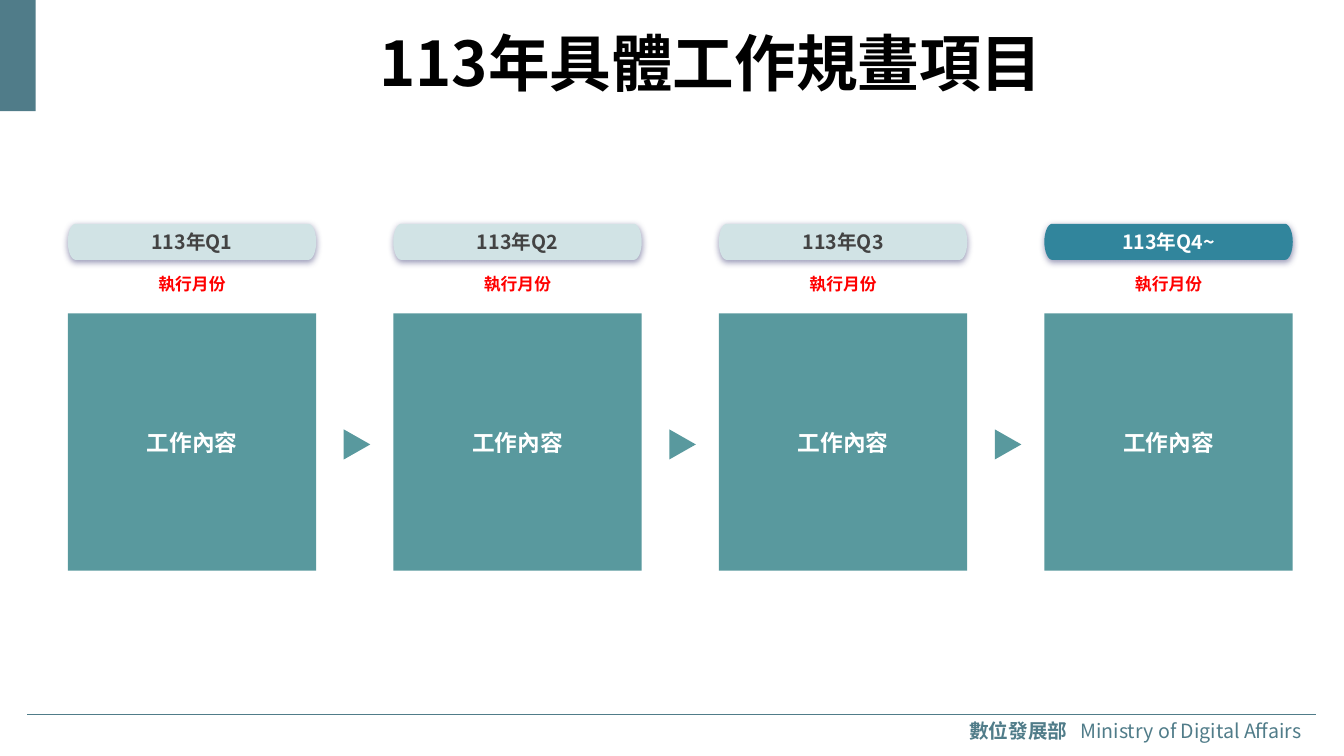
from math import cos, pi, sin

from lxml.etree import SubElement
from pptx import Presentation
from pptx.dml.color import RGBColor
from pptx.enum.shapes import MSO_CONNECTOR, MSO_SHAPE
from pptx.enum.text import MSO_ANCHOR as Anchor, MSO_AUTO_SIZE as AutoSize, PP_ALIGN as Align
from pptx.oxml.ns import qn
from pptx.util import Cm, Pt

SLATE = RGBColor(0x50, 0x7C, 0x89)
TEAL = RGBColor(0x59, 0x99, 0x9E)
PALE = RGBColor(0xD1, 0xE3, 0xE5)
DEEP = RGBColor(0x31, 0x85, 0x9C)
GREY = RGBColor(0x43, 0x43, 0x43)
RED = RGBColor(0xFF, 0x00, 0x00)
BLACK = RGBColor(0x00, 0x00, 0x00)
WHITE = RGBColor(0xFF, 0xFF, 0xFF)

BODY_FONT = "Noto Sans CJK SC"
HEAD_FONT = "Noto Sans CJK TC"

QUARTERS = [
    ("113年Q1", PALE, GREY),
    ("113年Q2", PALE, GREY),
    ("113年Q3", PALE, GREY),
    ("113年Q4~", DEEP, WHITE),
]


def write(shape, *texts, size, color, font=BODY_FONT, bold=(True,), align=Align.CENTER,
          anchor=Anchor.MIDDLE, inset=(0.2, 0.1), wrap=True):
    """Fill a shape with one paragraph; each text is a run with its own weight."""
    frame = shape.text_frame
    frame.auto_size = AutoSize.NONE
    frame.word_wrap = wrap
    frame.vertical_anchor = anchor
    frame.margin_left = frame.margin_right = Cm(inset[0])
    frame.margin_top = frame.margin_bottom = Cm(inset[1])
    paragraph = frame.paragraphs[0]
    paragraph.alignment = align
    for text, weight in zip(texts, bold):
        run = paragraph.add_run()
        run.text = text
        run.font.size = Pt(size)
        run.font.bold = weight
        run.font.color.rgb = color
        run.font.name = font
        SubElement(run.font._element, qn("a:ea"), typeface=font)
    return paragraph


def paint(shape, color):
    shape.fill.solid()
    shape.fill.fore_color.rgb = color
    shape.line.fill.background()
    shape.shadow.inherit = False
    return shape


def add_rectangle(slide, left, top, width, height, color):
    box = (Cm(length) for length in (left, top, width, height))
    return paint(slide.shapes.add_shape(MSO_SHAPE.RECTANGLE, *box), color)


def add_text_box(slide, left, top, width, height):
    return slide.shapes.add_textbox(Cm(left), Cm(top), Cm(width), Cm(height))


def add_outline(slide, points, color):
    points = [(Cm(x), Cm(y)) for x, y in points]
    builder = slide.shapes.build_freeform(*points[0])
    builder.add_line_segments(points[1:], close=True)
    return paint(builder.convert_to_shape(), color)


def add_pill(slide, left, top, width, height, color):
    """Bar with half-ellipse ends and a soft shadow below."""
    end, half, steps = 0.2, height / 2, 16
    right_end = [(left + width - end + end * sin(pi * i / steps),
                  top + half - half * cos(pi * i / steps)) for i in range(steps + 1)]
    left_end = [(2 * left + width - x, y) for x, y in reversed(right_end)]
    pill = add_outline(slide, right_end + left_end, color)

    effects = pill._element.spPr.find(qn("a:effectLst"))
    shadow = SubElement(effects, qn("a:outerShdw"), blurRad=str(Pt(4.5)),
                        dist=str(Pt(1.5)), dir="5400000", algn="bl", rotWithShape="0")
    tint = SubElement(shadow, qn("a:srgbClr"), val="393973")
    SubElement(tint, qn("a:alpha"), val="50000")
    return pill


def add_arrow(slide, left, top, width, height):
    tip = (left + width, top + height / 2)
    add_outline(slide, [(left, top), tip, (left, top + height)], TEAL)


def add_quarter(slide, left, top, width, label, fill, color):
    # Quarter label
    pill = add_pill(slide, left, top, width, 0.91, fill)
    write(pill, label, size=14, color=color, inset=(0.2, 0.2))
    # Months
    months = add_text_box(slide, left + 0.73, top + 1.17, width - 1.46, 0.91)
    write(months, "執行月份", size=12, color=RED, anchor=Anchor.TOP, inset=(0.15, 0.08))
    # Work content
    content = add_rectangle(slide, left, top + 2.26, width, 6.48, TEAL)
    write(content, "工作內容", size=16.2, color=WHITE, inset=(0.08, 0.13))


def add_timeline(slide, left, top, width):
    column, arrow = 6.26, 0.67
    pitch = (width - column) / (len(QUARTERS) - 1)
    for index, quarter in enumerate(QUARTERS):
        x = left + index * pitch
        add_quarter(slide, x, top, column, *quarter)
        if index:
            add_arrow(slide, x - 1.25, top + 5.18, arrow, 0.76)


def add_header(slide, left, top, width, height):
    add_rectangle(slide, 0, 0, 0.9, 2.8, SLATE)
    title = slide.shapes.title
    title.left, title.top, title.width, title.height = map(Cm, (left, top, width, height))
    write(title, "113年具體工作規畫項目", size=44, color=BLACK, font=HEAD_FONT)


def add_footer(slide, left, top, width):
    # Rule
    rule = slide.shapes.add_connector(MSO_CONNECTOR.STRAIGHT, Cm(left), Cm(top),
                                      Cm(left + width), Cm(top))
    rule.line.color.rgb = SLATE
    rule.line.width = Pt(0.5)
    SubElement(rule._element.spPr, qn("a:effectLst"))
    # Ministry name, with a tab between the two languages
    name_width = 8.94
    name = add_text_box(slide, left + width - name_width, top, name_width, 0.81)
    paragraph = write(name, "數位發展部\t", "Ministry of Digital Affairs", size=14,
                      color=SLATE, font=HEAD_FONT, bold=(True, False),
                      align=Align.LEFT, wrap=False)
    tabs = SubElement(paragraph._p.get_or_add_pPr(), qn("a:tabLst"))
    SubElement(tabs, qn("a:tab"), pos=str(Cm(2.8)), algn="l")


def main():
    presentation = Presentation()
    presentation.slide_width, presentation.slide_height = Cm(33.87), Cm(19.05)
    slide = presentation.slides.add_slide(presentation.slide_layouts[5])
    add_footer(slide, 0.69, 18.01, 32.48)
    add_header(slide, 2.92, 0.3, 30, 2.5)
    add_timeline(slide, 1.71, 5.64, 31.07 - 0.2)
    presentation.save("out.pptx")


if __name__ == "__main__":
    main()
